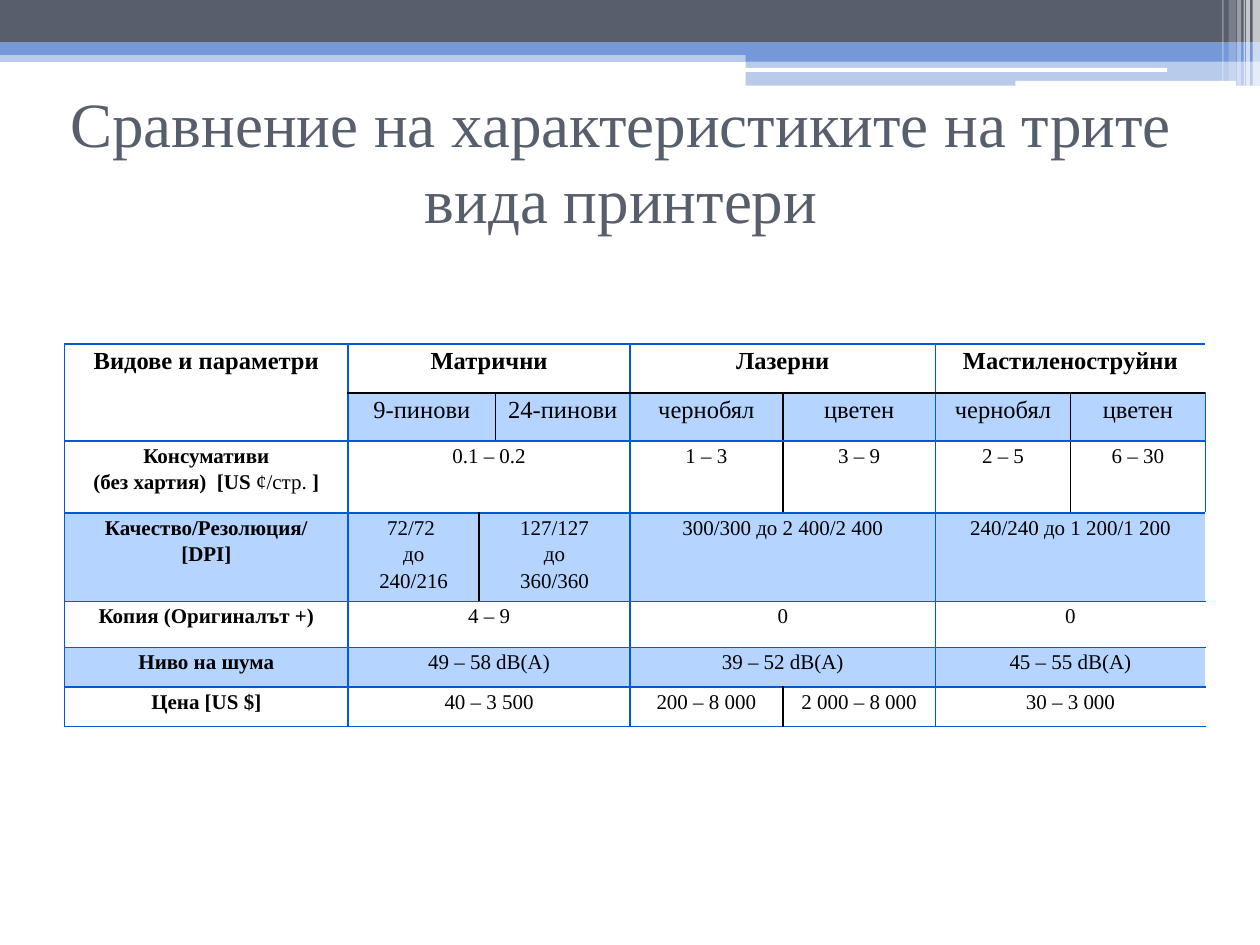
from copy import deepcopy

from lxml.etree import SubElement
from pptx import Presentation
from pptx.dml.color import RGBColor
from pptx.enum.shapes import MSO_SHAPE as Preset
from pptx.enum.text import MSO_ANCHOR as Anchor, MSO_AUTO_SIZE as AutoSize, PP_ALIGN as Align
from pptx.oxml.ns import qn
from pptx.util import Cm, Pt

FONT = "Times New Roman"
COLORS = {"slate": "575F6D", "blue": "7598D9", "white": "FFFFFF",
          "band": "B5D4FF", "grid": "005BD3", "black": "000000"}

TITLE = "Сравнение на характеристиките на трите вида принтери\n"

# left, top, width, height in cm, colour, opacity in percent
RECT_BANDS = [
    (0, 1.02, 25.4, 0.23, "blue", 50),
    (0, 0, 25.4, 0.86, "slate", 100),
    (0, 0.86, 25.4, 0.25, "blue", 100),
    (15.03, 0.99, 10.37, 0.25, "blue", 100),
    (15.03, 1.23, 10.37, 0.5, "blue", 50),
]
ROUNDED_BANDS = [
    (15.02, 1.37, 8.51, 0.08, "white", 100),
    (20.47, 1.63, 4.45, 0.1, "white", 100),
]
# left, width, height in cm, opacity in percent
CORNER_STRIPES = [
    (25.25, 0.15, 1.73, 65), (25.12, 0.08, 1.73, 65), (25.07, 0.03, 1.73, 60),
    (24.94, 0.08, 1.73, 40), (24.77, 0.15, 1.63, 20), (24.64, 0.03, 1.63, 30),
]

TABLE_LEFT, TABLE_TOP = 1.3, 6.93
COLUMN_WIDTHS = [5.72, 2.64, 0.33, 2.71, 3.08, 3.08, 2.72, 2.72]
ROW_HEIGHTS = [0.99, 0.97, 1.45, 1.79, 0.92, 0.8, 0.8]
GROUP_EDGES = {0, 1, 4, 6, 8}
HEADER_ROWS = 2

# each row: (column span, text); a text of several parts alternates bold and regular
ROWS = [
    [(1, "Видове и параметри"), (3, "Матрични"), (2, "Лазерни"), (2, "Мастиленоструйни")],
    [(1, None), (2, "9-пинови"), (1, "24-пинови"), (1, "чернобял"), (1, "цветен"),
     (1, "чернобял"), (1, "цветен")],
    [(1, ("Консумативи\n(без хартия)  [US ", "¢/стр.", " ]")), (3, "0.1 – 0.2"),
     (1, "1 – 3"), (1, "3 – 9"), (1, "2 – 5"), (1, "6 – 30")],
    [(1, "Качество/Резолюция/\n[DPI]"), (1, "72/72 \nдо\n240/216"),
     (2, "127/127\n до \n360/360"), (2, "300/300 до 2 400/2 400"),
     (2, "240/240 до 1 200/1 200")],
    [(1, "Копия (Оригиналът +)"), (3, "4 – 9"), (2, "0"), (2, "0")],
    [(1, "Ниво на шума"), (3, "49 – 58 dB(A)"), (2, "39 – 52 dB(A)"), (2, "45 – 55 dB(A)")],
    [(1, "Цена [US $]"), (3, "40 – 3 500"), (1, "200 – 8 000"), (1, "2 000 – 8 000"),
     (2, "30 – 3 000")],
]


def rgb(color):
    return RGBColor.from_string(COLORS[color])


def set_all(target, values):
    for name, value in values.items():
        setattr(target, name, value)


def add_band(slide, preset, left, top, width, height, color, opacity):
    band = slide.shapes.add_shape(preset, Cm(left), Cm(top), Cm(width), Cm(height))
    band.shadow.inherit = False
    band.line.fill.background()
    band.fill.solid()
    band.fill.fore_color.rgb = rgb(color)
    if opacity < 100:
        fill_color = band._element.spPr.find(".//" + qn("a:srgbClr"))
        SubElement(fill_color, qn("a:alpha"), val=str(opacity * 1000))


def write(paragraph, text, size, color, bold=False):
    """Add formatted runs, with line breaks of the same size between them."""
    for index, line in enumerate(text.split("\n")):
        if index:
            paragraph.add_line_break()
            paragraph._p[-1].append(deepcopy(run.font._element))
        if line:
            run = paragraph.add_run()
            run.text = line
            set_all(run.font, {"name": FONT, "size": Pt(size), "bold": bold})
            run.font.color.rgb = rgb(color)


def add_border(cell, side, color):
    border = SubElement(cell._tc.get_or_add_tcPr(), qn("a:ln" + side), w=str(Pt(1)))
    SubElement(SubElement(border, qn("a:solidFill")), qn("a:srgbClr"), val=COLORS[color])


def frame_cell(cell, row, column, start, end):
    """Draw the sides of a grid cell that lie on the edge of its merged area."""
    merged_corner = column == 0 and row < HEADER_ROWS
    if column == start:
        add_border(cell, "L", "grid" if start in GROUP_EDGES else "black")
    if column == end - 1:
        add_border(cell, "R", "grid" if end in GROUP_EDGES else "black")
    if not (merged_corner and row == 1):
        add_border(cell, "T", "black" if row == 1 else "grid")
    if not (merged_corner and row == 0):
        add_border(cell, "B", "black" if row == 0 else "grid")
    if row % 2 and not merged_corner:
        cell.fill.solid()
        cell.fill.fore_color.rgb = rgb("band")
    else:
        cell.fill.background()


def fill_cell(cell, text, size, bold):
    set_all(cell, {"margin_left": Cm(0.19), "margin_right": Cm(0.19),
                   "margin_top": 0, "margin_bottom": 0})
    paragraph = cell.text_frame.paragraphs[0]
    set_all(paragraph, {"alignment": Align.CENTER, "line_spacing": 1.15,
                        "space_after": Pt(10)})
    parts = (text,) if isinstance(text, str) else text
    for index, part in enumerate(parts):
        write(paragraph, part, size, "black", bold and index % 2 == 0)


def add_comparison(slide):
    table = slide.shapes.add_table(
        len(ROW_HEIGHTS), len(COLUMN_WIDTHS), Cm(TABLE_LEFT), Cm(TABLE_TOP),
        Cm(sum(COLUMN_WIDTHS)), Cm(sum(ROW_HEIGHTS))).table
    set_all(table, {"first_row": False, "horz_banding": False})
    for column, width in zip(table.columns, COLUMN_WIDTHS):
        column.width = Cm(width)
    for row, height in zip(table.rows, ROW_HEIGHTS):
        row.height = Cm(height)

    table.cell(0, 0).merge(table.cell(HEADER_ROWS - 1, 0))
    for row, entries in enumerate(ROWS):
        start = 0
        for span, text in entries:
            end = start + span
            for column in range(start, end):
                frame_cell(table.cell(row, column), row, column, start, end)
            if span > 1:
                table.cell(row, start).merge(table.cell(row, end - 1))
            if text:
                fill_cell(table.cell(row, start), text,
                          14 if row < HEADER_ROWS else 12, row == 0 or start == 0)
            start = end


def add_title(slide):
    title = slide.shapes.title
    set_all(title, {"left": Cm(1.09), "top": Cm(2.51), "width": Cm(22.86), "height": Cm(2.97)})
    set_all(title.text_frame, {"word_wrap": True, "auto_size": AutoSize.NONE,
                               "vertical_anchor": Anchor.MIDDLE})
    paragraph = title.text_frame.paragraphs[0]
    paragraph.alignment = Align.CENTER
    write(paragraph, TITLE, 36, "slate")
    SubElement(paragraph._p, qn("a:endParaRPr"), sz="3600")


def main():
    deck = Presentation()
    set_all(deck, {"slide_width": Cm(25.4), "slide_height": Cm(19.05)})
    slide = deck.slides.add_slide(deck.slide_layouts[5])
    for band in RECT_BANDS:
        add_band(slide, Preset.RECTANGLE, *band)
    for band in ROUNDED_BANDS:
        add_band(slide, Preset.ROUNDED_RECTANGLE, *band)
    for left, width, height, opacity in CORNER_STRIPES:
        add_band(slide, Preset.RECTANGLE, left, 0, width, height, "white", opacity)
    add_title(slide)
    add_comparison(slide)
    deck.save("out.pptx")


if __name__ == "__main__":
    main()
